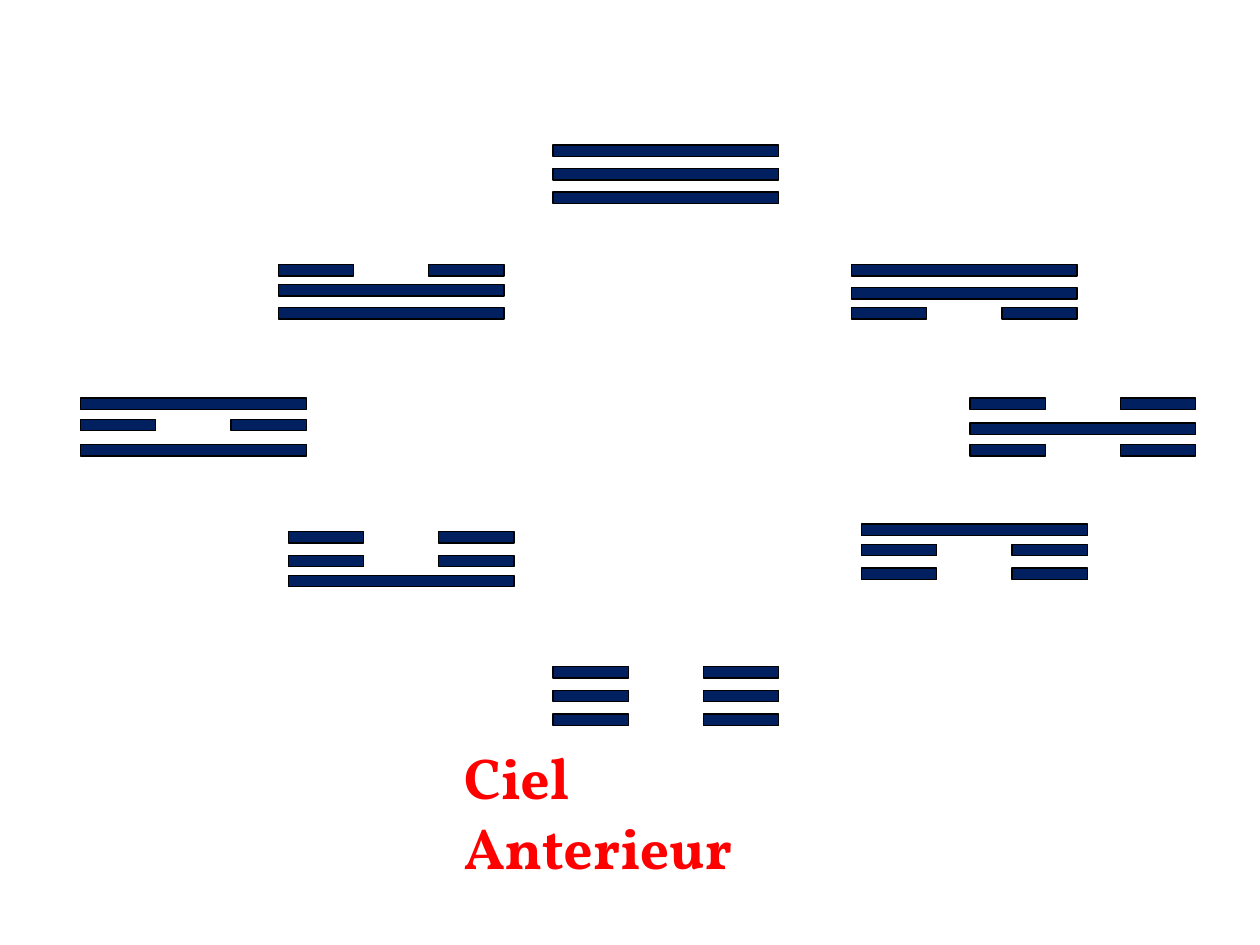
from dataclasses import dataclass

from pptx import Presentation
from pptx.dml.color import RGBColor
from pptx.enum.shapes import MSO_SHAPE
from pptx.enum.text import MSO_ANCHOR, MSO_AUTO_SIZE, PP_ALIGN
from pptx.util import Pt


@dataclass(frozen=True)
class Theme:
    bar_fill: RGBColor = RGBColor(0x00, 0x20, 0x60)
    bar_line: RGBColor = RGBColor(0x00, 0x00, 0x00)
    title_color: RGBColor = RGBColor(0xFF, 0x00, 0x00)
    title_font: str = "Vollkorn"
    title_size: float = 33
    line_width: float = 0.75


THEME = Theme()
BAR_WIDTH, HALF_WIDTH, BAR_HEIGHT = 129, 43, 6.5

# Left, top, pattern from top to bottom (1 whole, 0 broken), row offsets
TRIGRAMS = [
    (316, 82.9, "111", (0, 13.5, 26.8)),    # top
    (316, 381, "000", (0, 13.5, 27)),       # bottom
    (492.3, 299.5, "100", (0, 11.5, 25)),   # lower right
    (159, 151.2, "011", (0, 11.5, 24.6)),   # upper left
    (164.7, 303.8, "001", (0, 13.5, 25)),   # lower left
    (486.5, 151.2, "110", (0, 13.2, 24.6)), # upper right
    (46, 227.5, "101", (0, 12.2, 26.6)),    # left
    (554.3, 227.5, "010", (0, 14.2, 26.6)), # right
]


def set_attributes(target, values):
    for name, value in values.items():
        setattr(target, name, value)


def add_bar(group, left, top, width):
    shape = group.shapes.add_shape(
        MSO_SHAPE.RECTANGLE, Pt(left), Pt(top), Pt(width), Pt(BAR_HEIGHT))
    shape.shadow.inherit = False
    shape.fill.solid()
    shape.fill.fore_color.rgb = THEME.bar_fill
    shape.line.color.rgb = THEME.bar_line
    shape.line.width = Pt(THEME.line_width)


def add_trigram(slide, left, top, pattern, offsets):
    group = slide.shapes.add_group_shape()
    for kind, offset in zip(pattern, offsets):
        if kind == "1":
            add_bar(group, left, top + offset, BAR_WIDTH)
        else:
            for shift in (0, BAR_WIDTH - HALF_WIDTH):
                add_bar(group, left + shift, top + offset, HALF_WIDTH)


def format_title(slide, text):
    title = slide.shapes.title
    set_attributes(title, {"left": Pt(257.8), "top": Pt(420.5),
                           "width": Pt(222), "height": Pt(47.5)})
    frame = title.text_frame
    set_attributes(frame, {"text": text, "word_wrap": True,
                           "auto_size": MSO_AUTO_SIZE.NONE,
                           "vertical_anchor": MSO_ANCHOR.TOP})
    paragraph = frame.paragraphs[0]
    paragraph.alignment = PP_ALIGN.LEFT
    font = paragraph.runs[0].font
    set_attributes(font, {"name": THEME.title_font, "bold": True,
                          "size": Pt(THEME.title_size)})
    font.color.rgb = THEME.title_color


def main():
    presentation = Presentation()
    set_attributes(presentation, {"slide_width": Pt(720), "slide_height": Pt(540)})
    slide = presentation.slides.add_slide(presentation.slide_layouts[5])

    # Ring of eight trigrams
    for trigram in TRIGRAMS:
        add_trigram(slide, *trigram)

    # Title below the ring
    format_title(slide, "Ciel Anterieur")

    presentation.save("out.pptx")


if __name__ == "__main__":
    main()
